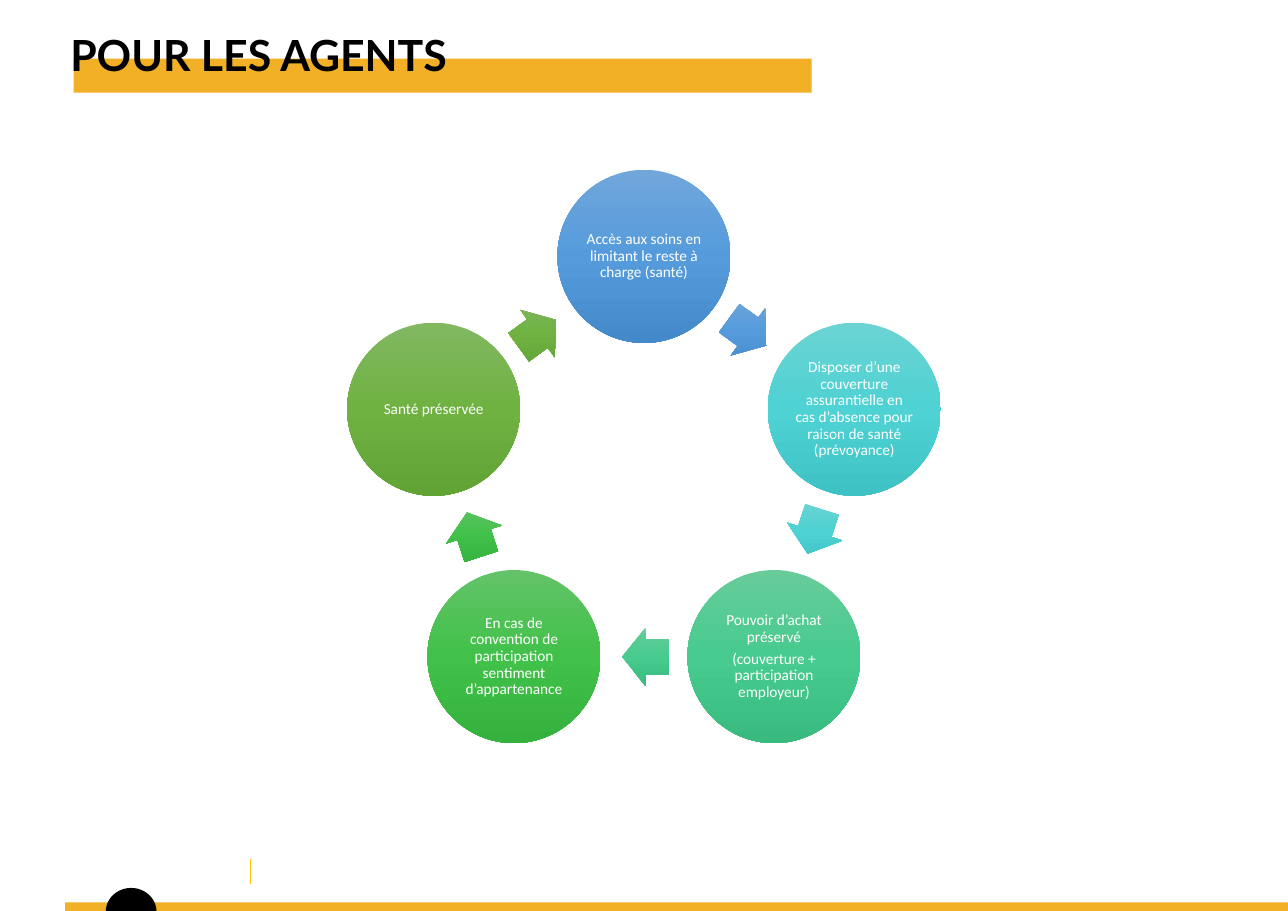
import math
from dataclasses import dataclass

import lxml.etree
import pptx
import pptx.dml.color
import pptx.enum.shapes
import pptx.enum.text
import pptx.oxml
import pptx.oxml.ns
import pptx.util
from pptx.dml.color import RGBColor
from pptx.enum.shapes import MSO_SHAPE
from pptx.util import Cm

AMBER = RGBColor(0xF2, 0xB0, 0x27)
GOLD = RGBColor(0xFF, 0xC0, 0x00)
BLACK = RGBColor(0x00, 0x00, 0x00)
WHITE = RGBColor(0xFF, 0xFF, 0xFF)

SLIDE_WIDTH, SLIDE_HEIGHT = 29.7, 21.0
CENTRE_X, CENTRE_Y = 14.85, 11.01
STEP_RADIUS, STEP_SIZE = 5.1, 3.99
ARROW_RADIUS, ARROW_WIDTH, ARROW_HEIGHT = 4.13, 1.07, 1.35
ARROW_LAG = 0.5  # degrees by which each arrow sits before the midpoint


@dataclass(frozen=True)
class Step:
    paragraphs: tuple[str, ...]
    shades: tuple[RGBColor, RGBColor, RGBColor]


def shades(top: str, middle: str, bottom: str) -> tuple[RGBColor, RGBColor, RGBColor]:
    return RGBColor.from_string(top), RGBColor.from_string(middle), RGBColor.from_string(bottom)


STEPS = (
    Step(("Accès aux soins en limitant le reste à charge (santé)",),
         shades("71A6DB", "559BDB", "448ACA")),
    Step(("Disposer d’une couverture assurantielle en cas d’absence pour raison de santé (prévoyance)",),
         shades("6CD3D3", "4ED2D3", "3EC2C3")),
    Step(("Pouvoir d’achat préservé", "(couverture + participation employeur)"),
         shades("67CC9A", "47CB8E", "39BB7F")),
    Step(("En cas de convention de participation sentiment d’appartenance",),
         shades("63C368", "42C14A", "34B23D")),
    Step(("Santé préservée",),
         shades("81B861", "6FB242", "62A336")),
)


def add_plain_shape(slide, kind: MSO_SHAPE, left: float, top: float, width: float, height: float):
    shape = slide.shapes.add_shape(kind, Cm(left), Cm(top), Cm(width), Cm(height))
    shape.shadow.inherit = False
    shape.line.fill.background()
    return shape


def add_solid_shape(slide, kind: MSO_SHAPE, left: float, top: float, width: float,
                    height: float, colour: RGBColor):
    shape = add_plain_shape(slide, kind, left, top, width, height)
    shape.fill.solid()
    shape.fill.fore_color.rgb = colour
    return shape


def add_on_ring(slide, kind: MSO_SHAPE, angle: float, radius: float, width: float,
                height: float, colours: tuple[RGBColor, ...]):
    """Centre a shaded shape on the ring, at an angle clockwise from the top."""
    x = CENTRE_X + radius * math.sin(math.radians(angle))
    y = CENTRE_Y - radius * math.cos(math.radians(angle))
    shape = add_plain_shape(slide, kind, x - width / 2, y - height / 2, width, height)
    fill_downwards(shape, colours)
    return shape


def fill_downwards(shape, colours: tuple[RGBColor, ...]) -> None:
    """Shade from top to bottom, whatever the rotation of the shape."""
    shape.fill.gradient()
    properties = shape.element.spPr
    stops = "".join(
        f'<a:gs pos="{position}"><a:srgbClr val="{colour}"/></a:gs>'
        for position, colour in zip((0, 50000, 100000), colours))
    gradient = pptx.oxml.parse_xml(
        f'<a:gradFill {pptx.oxml.ns.nsdecls("a")} rotWithShape="0">'
        f'<a:gsLst>{stops}</a:gsLst><a:lin ang="5400000" scaled="0"/></a:gradFill>')
    properties.replace(properties.find(pptx.oxml.ns.qn("a:gradFill")), gradient)


def write_step(circle, paragraphs: tuple[str, ...]) -> None:
    frame = circle.text_frame
    frame.word_wrap = True
    frame.vertical_anchor = pptx.enum.text.MSO_ANCHOR.MIDDLE
    frame.margin_left = frame.margin_right = frame.margin_top = frame.margin_bottom = Cm(0.03)
    for index, text in enumerate(paragraphs):
        paragraph = frame.add_paragraph() if index else frame.paragraphs[0]
        paragraph.alignment = pptx.enum.text.PP_ALIGN.CENTER
        paragraph.line_spacing = 0.9
        paragraph.space_after = pptx.util.Pt(3.5)
        run = paragraph.add_run()
        run.text = text
        run.font.name = "Calibri"
        run.font.size = pptx.util.Pt(10)
        run.font.color.rgb = WHITE


def add_cycle(slide) -> None:
    sector = 360 / len(STEPS)
    for index, step in enumerate(STEPS):
        angle = index * sector
        circle = add_on_ring(slide, MSO_SHAPE.OVAL, angle, STEP_RADIUS,
                             STEP_SIZE, STEP_SIZE, step.shades)
        write_step(circle, step.paragraphs)
        heading = angle + sector / 2
        arrow = add_on_ring(slide, MSO_SHAPE.RIGHT_ARROW, heading - ARROW_LAG, ARROW_RADIUS,
                            ARROW_WIDTH, ARROW_HEIGHT, step.shades)
        arrow.adjustments[0] = 0.6
        arrow.adjustments[1] = 0.5
        arrow.rotation = heading


def add_footer(slide) -> None:
    add_solid_shape(slide, MSO_SHAPE.RECTANGLE, 1.5, 20.8, SLIDE_WIDTH - 1.5, 0.2, AMBER)
    page_tab = add_solid_shape(slide, MSO_SHAPE.CHORD, 2.44, 20.47, 1.17, 1.09, BLACK)
    page_tab.adjustments[0] = 108.37
    page_tab.adjustments[1] = 215.49
    divider = slide.shapes.add_connector(pptx.enum.shapes.MSO_CONNECTOR.STRAIGHT,
                                         Cm(5.77), Cm(20.37), Cm(5.77), Cm(19.79))
    divider.line.color.rgb = GOLD
    divider.line.width = pptx.util.Pt(0.75)
    lxml.etree.SubElement(divider.element.spPr, pptx.oxml.ns.qn("a:effectLst"))


def add_heading(slide) -> None:
    title = slide.shapes.title
    title.left, title.top, title.width, title.height = Cm(1.37), Cm(0.41), Cm(18), Cm(1.7)
    frame = title.text_frame
    frame.word_wrap = True
    frame.auto_size = pptx.enum.text.MSO_AUTO_SIZE.SHAPE_TO_FIT_TEXT
    frame.vertical_anchor = pptx.enum.text.MSO_ANCHOR.TOP
    frame.margin_left = frame.margin_right = frame.margin_top = frame.margin_bottom = Cm(0.25)
    paragraph = frame.paragraphs[0]
    paragraph.alignment = pptx.enum.text.PP_ALIGN.LEFT
    run = paragraph.add_run()
    run.text = "POUR LES AGENTS"
    run.font.name = "Lato"
    run.font.size = pptx.util.Pt(28)
    run.font.bold = True
    run.font.color.rgb = BLACK
    underline = add_solid_shape(slide, MSO_SHAPE.RECTANGLE, 1.7, 1.35, 17.02, 0.79, AMBER)
    title.element.addprevious(underline.element)


def main() -> None:
    presentation = pptx.Presentation()
    presentation.slide_width = Cm(SLIDE_WIDTH)
    presentation.slide_height = Cm(SLIDE_HEIGHT)
    slide = presentation.slides.add_slide(presentation.slide_layouts.get_by_name("Title Only"))
    add_heading(slide)
    add_footer(slide)
    add_cycle(slide)
    presentation.save("out.pptx")


if __name__ == "__main__":
    main()
